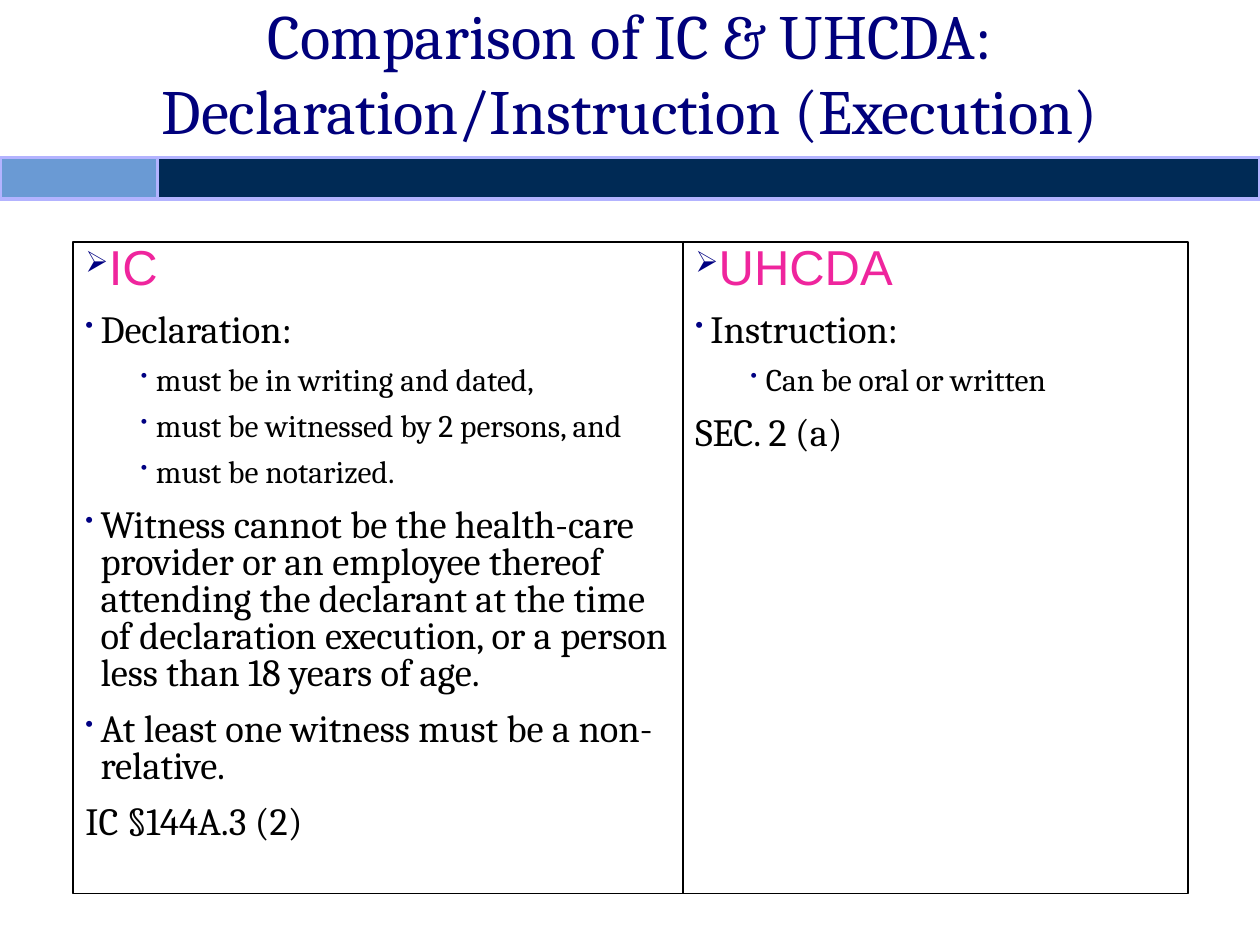
from dataclasses import dataclass

from lxml import etree
from pptx import Presentation
from pptx.dml.color import RGBColor
from pptx.enum.shapes import MSO_SHAPE
from pptx.enum.text import MSO_ANCHOR, MSO_AUTO_SIZE, PP_ALIGN
from pptx.oxml.ns import qn
from pptx.util import Inches, Pt

RECTANGLE = MSO_SHAPE.RECTANGLE
TOP, MIDDLE = MSO_ANCHOR.TOP, MSO_ANCHOR.MIDDLE
LEFT, CENTER = PP_ALIGN.LEFT, PP_ALIGN.CENTER
NO_AUTOFIT = MSO_AUTO_SIZE.NONE
TITLE_ONLY = 5


@dataclass(frozen=True)
class Theme:
    serif: str = "Cambria"
    sans: str = "Arial"
    title: str = "00007C"
    heading: str = "EF259D"
    text: str = "000000"
    bullet: str = "000082"
    panel: str = "FFFFFF"
    band: str = "002A55"
    accent: str = "6A9AD4"
    band_edge: str = "B3B3FF"
    title_size: int = 36


@dataclass(frozen=True)
class Style:
    size: int
    font: str
    color: str
    bullet: str = ""
    margin: float = 0
    indent: float = 0
    level: int = 0


THEME = Theme()
STYLES = {
    "heading": Style(28, THEME.sans, THEME.heading, "➢", 0.01, -0.31, 1),
    "point": Style(22, THEME.serif, THEME.text, "•", 0.12, -0.12),
    "detail": Style(18, THEME.serif, THEME.text, "•", 0.56, -0.12, 1),
    "source": Style(22, THEME.serif, THEME.text),
}

# Slide grid, in inches
WIDTH, HEIGHT = 10, 7.5
COLUMNS = (0.58, 5.42, 9.43)
PANEL_TOP, PANEL_HEIGHT = 1.92, 5.17
BAND_TOP, BAND_HEIGHT = HEIGHT / 6, 0.33
BAND_SPLIT = WIDTH / 8

TITLE = ("Comparison of IC & UHCDA:", "Declaration/Instruction (Execution)")
PANELS = (
    (
        ("heading", "IC"),
        ("point", "Declaration:"),
        ("detail", "must be in writing and dated,"),
        ("detail", "must be witnessed by 2 persons, and"),
        ("detail", "must be notarized."),
        ("point", "Witness cannot be the health-care provider or an employee "
                  "thereof attending the declarant at the time of declaration "
                  "execution, or a person less than 18 years of age."),
        ("point", "At least one witness must be a non-relative."),
        ("source", "IC §144A.3 (2)"),
    ),
    (
        ("heading", "UHCDA"),
        ("point", "Instruction:"),
        ("detail", "Can be oral or written"),
        ("source", "SEC. 2 (a)"),
    ),
)


def add_span(para, text, size, font, color):
    span = para.add_run()
    span.text = text
    span.font.size = Pt(size)
    span.font.name = font
    span.font.color.rgb = RGBColor.from_string(color)


def add_box(page, left, top, width, height, fill, edge, edge_width):
    box = page.shapes.add_shape(
        RECTANGLE, *(Inches(n) for n in (left, top, width, height)))
    box.shadow.inherit = False
    box.fill.solid()
    box.fill.fore_color.rgb = RGBColor.from_string(fill)
    box.line.color.rgb = RGBColor.from_string(edge)
    box.line.width = Pt(edge_width)
    return box


def format_para(para, style, first):
    """Set spacing, indents and the bullet of a paragraph."""
    para.alignment = LEFT
    para.level = style.level
    para.line_spacing = 0.8
    props = para._p.get_or_add_pPr()
    props.set("marL", str(Inches(style.margin)))
    props.set("indent", str(Inches(style.indent)))
    if not first:
        before = etree.SubElement(props, qn("a:spcBef"))
        etree.SubElement(before, qn("a:spcPct"), val="50000")
    if style.bullet:
        color = etree.SubElement(props, qn("a:buClr"))
        etree.SubElement(color, qn("a:srgbClr"), val=THEME.bullet)
        etree.SubElement(props, qn("a:buSzPct"), val="60000")
        etree.SubElement(props, qn("a:buChar"), char=style.bullet)


def add_title(page):
    box = page.shapes.title
    box.left, box.top = Inches(0.08), Inches(0.17)
    box.width, box.height = Inches(9.84), Inches(1.39)
    frame = box.text_frame
    frame.word_wrap = True
    frame.auto_size = NO_AUTOFIT
    frame.vertical_anchor = MIDDLE
    # Lift the two lines clear of the band
    frame.margin_bottom = Inches(0.64)
    para = frame.paragraphs[0]
    para.alignment = CENTER
    for index, line in enumerate(TITLE):
        if index:
            para.add_line_break()
        add_span(para, line, THEME.title_size, THEME.serif, THEME.title)


def add_panel(page, left, right, items):
    box = add_box(page, left, PANEL_TOP, right - left, PANEL_HEIGHT,
                  THEME.panel, THEME.text, 0.75)
    frame = box.text_frame
    frame.word_wrap = True
    frame.vertical_anchor = TOP
    for index, (kind, text) in enumerate(items):
        style = STYLES[kind]
        para = frame.add_paragraph() if index else frame.paragraphs[0]
        format_para(para, style, first=index == 0)
        add_span(para, text, style.size, style.font, style.color)


def add_band(page):
    for left, right, fill in ((BAND_SPLIT, WIDTH, THEME.band),
                              (0, BAND_SPLIT, THEME.accent)):
        add_box(page, left, BAND_TOP, right - left, BAND_HEIGHT,
                fill, THEME.band_edge, 2)


def main():
    deck = Presentation()
    deck.slide_width, deck.slide_height = Inches(WIDTH), Inches(HEIGHT)
    page = deck.slides.add_slide(deck.slide_layouts[TITLE_ONLY])
    add_title(page)
    # Side-by-side comparison
    for left, right, items in zip(COLUMNS, COLUMNS[1:], PANELS):
        add_panel(page, left, right, items)
    add_band(page)
    deck.save("out.pptx")


if __name__ == "__main__":
    main()
